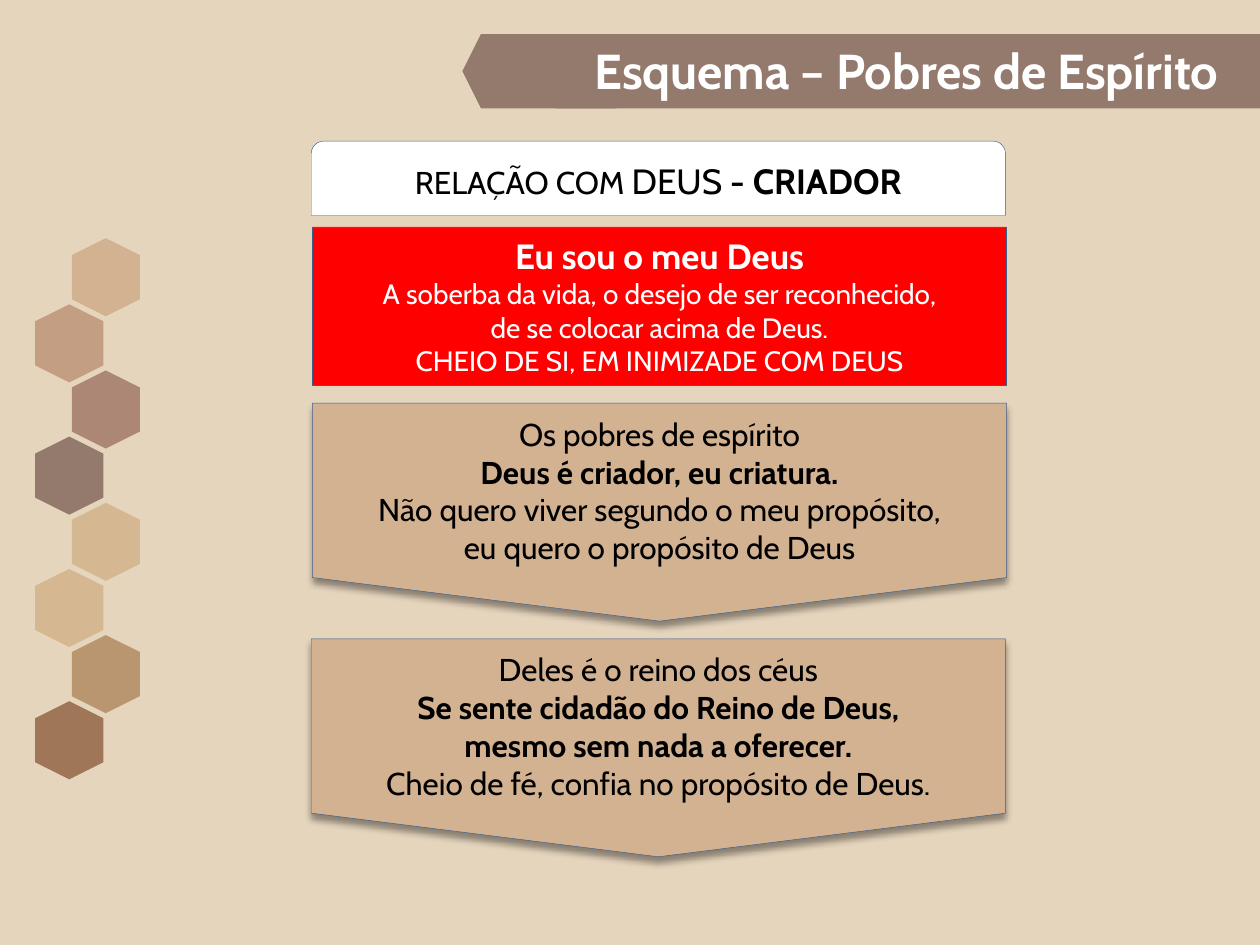
from dataclasses import dataclass

from lxml import etree
from pptx import Presentation
from pptx.dml.color import RGBColor
from pptx.enum.shapes import MSO_SHAPE
from pptx.enum.text import MSO_ANCHOR, MSO_AUTO_SIZE, PP_ALIGN
from pptx.oxml.ns import qn
from pptx.util import Inches, Pt

RECTANGLE = MSO_SHAPE.RECTANGLE
HEXAGON = MSO_SHAPE.HEXAGON
ROUND_TOP = MSO_SHAPE.ROUND_2_SAME_RECTANGLE
PENTAGON_DOWN = MSO_SHAPE.FLOWCHART_OFFPAGE_CONNECTOR
MIDDLE, TOP = MSO_ANCHOR.MIDDLE, MSO_ANCHOR.TOP
GROW = MSO_AUTO_SIZE.SHAPE_TO_FIT_TEXT
CENTER, RIGHT = PP_ALIGN.CENTER, PP_ALIGN.RIGHT

FONT = "Cabin"
SAND, TAN, BROWN, OUTLINE = "E6D5BD", "D3B292", "94796D", "3A5F8C"
WHITE, BLACK, RED = "FFFFFF", "000000", "FF0000"

# Grid of 100 columns by 75 rows
CELL = Inches(0.1)
PANEL_COLUMNS = 55.1


@dataclass
class Words:
    text: str
    size: float
    bold: bool = False


@dataclass
class Panel:
    shape: MSO_SHAPE
    column: float
    row: float
    rows: float
    fill: str
    ink: str
    lines: list[list[Words]]
    shadow: bool = False


HEXAGON_COLORS = [TAN, "C39E82", "AC8775", BROWN,
                  "D5B891", "D5B891", "B9966F", "9F7758"]

PANELS = [
    Panel(ROUND_TOP, 24.7, 11.2, 5.9, WHITE, BLACK, [
        [Words("RELAÇÃO COM ", 18), Words("DEUS", 20),
         Words(" - CRIADOR", 20, True)],
    ]),
    Panel(RECTANGLE, 24.8, 18, 12.6, RED, WHITE, [
        [Words("Eu sou o meu Deus", 20, True)],
        [Words("A soberba da vida, o desejo de ser reconhecido,", 16)],
        [Words("de se colocar acima de Deus.", 16)],
        [Words("CHEIO DE SI, EM INIMIZADE COM DEUS", 16)],
    ]),
    Panel(PENTAGON_DOWN, 24.8, 32, 17.3, TAN, BLACK, [
        [Words("Os pobres de espírito", 18)],
        [Words("Deus é criador, eu criatura.", 18, True)],
        [Words("Não quero viver segundo o meu propósito,", 18)],
        [Words("eu quero o propósito de Deus", 18)],
    ], shadow=True),
    Panel(PENTAGON_DOWN, 24.7, 50.7, 17.3, TAN, BLACK, [
        [Words("Deles é o reino dos céus", 18)],
        [Words("Se sente cidadão do Reino de Deus,", 18, True)],
        [Words("mesmo sem nada a oferecer.", 18, True)],
        [Words("Cheio de fé, confia no propósito de Deus.", 18)],
    ], shadow=True),
]


def color(value: str) -> RGBColor:
    return RGBColor.from_string(value)


def cells(count: float) -> int:
    return round(count * CELL)


def paint(shape, fill: str, line: str | None = None) -> None:
    shape.shadow.inherit = False
    shape.fill.solid()
    shape.fill.fore_color.rgb = color(fill)
    if line:
        shape.line.color.rgb = color(line)
        shape.line.width = Pt(0.25)
    else:
        shape.line.fill.background()


def add_box(slide, kind, column: float, row: float, columns: float,
            rows: float, fill: str, line: str | None = None):
    box = slide.shapes.add_shape(
        kind, cells(column), cells(row), cells(columns), cells(rows))
    paint(box, fill, line)
    return box


def add_shadow(shape) -> None:
    effects = shape._element.spPr.find(qn("a:effectLst"))
    shadow = etree.SubElement(
        effects, qn("a:outerShdw"), blurRad=str(Pt(4)), dist=str(Pt(3)),
        dir=str(90 * 60000), rotWithShape="0")
    shade = etree.SubElement(shadow, qn("a:srgbClr"), val=BLACK)
    etree.SubElement(shade, qn("a:alpha"), val="40000")


def write(frame, lines: list[list[Words]], ink: str, alignment) -> None:
    frame.word_wrap = True
    for index, line in enumerate(lines):
        para = frame.add_paragraph() if index else frame.paragraphs[0]
        para.alignment = alignment
        for words in line:
            span = para.add_run()
            span.text = words.text
            span.font.name = FONT
            span.font.size = Pt(words.size)
            span.font.bold = words.bold
            span.font.color.rgb = color(ink)


def add_upright_hexagon(slide, column: float, row: float, fill: str) -> None:
    width, height, shoulder = 5.4, 6.2, 1.35
    corners = [(width / 2, 0), (width, shoulder), (width, height - shoulder),
               (width / 2, height), (0, height - shoulder), (0, shoulder)]
    points = [(cells(column + x), cells(row + y)) for x, y in corners]
    builder = slide.shapes.build_freeform(*points[0], scale=1.0)
    builder.add_line_segments(points[1:], close=True)
    paint(builder.convert_to_shape(), fill)


def add_panel(slide, panel: Panel) -> None:
    box = add_box(slide, panel.shape, panel.column, panel.row, PANEL_COLUMNS,
                  panel.rows, panel.fill, OUTLINE)
    if panel.shadow:
        add_shadow(box)
    box.text_frame.vertical_anchor = MIDDLE
    write(box.text_frame, panel.lines, panel.ink, CENTER)


def add_title(slide) -> None:
    # Banner with a pointed left end
    add_box(slide, RECTANGLE, 44.1, 2.7, 55.9, 5.9, BROWN)
    add_box(slide, HEXAGON, 36.7, 2.7, 13.7, 5.9, BROWN)

    # Title placeholder, brought in front of the banner
    title = slide.shapes.title
    title._element.getparent().append(title._element)
    title.left, title.top = cells(40.1), cells(2.7)
    title.width, title.height = cells(57.6), cells(5.7)
    title.text_frame.auto_size = GROW
    title.text_frame.vertical_anchor = TOP
    write(title.text_frame,
          [[Words("Esquema – Pobres de Espírito", 28, True)]], WHITE, RIGHT)


def main() -> None:
    deck = Presentation()
    deck.slide_width, deck.slide_height = cells(100), cells(75)
    slide = deck.slides.add_slide(deck.slide_layouts[5])
    slide.background.fill.solid()
    slide.background.fill.fore_color.rgb = color(SAND)

    # Zigzag of hexagons on the left
    for index, fill in enumerate(HEXAGON_COLORS):
        column = 2.8 if index % 2 else 5.7
        add_upright_hexagon(slide, column, 18.9 + 5.25 * index, fill)

    add_title(slide)
    for panel in PANELS:
        add_panel(slide, panel)
    deck.save("out.pptx")


if __name__ == "__main__":
    main()
